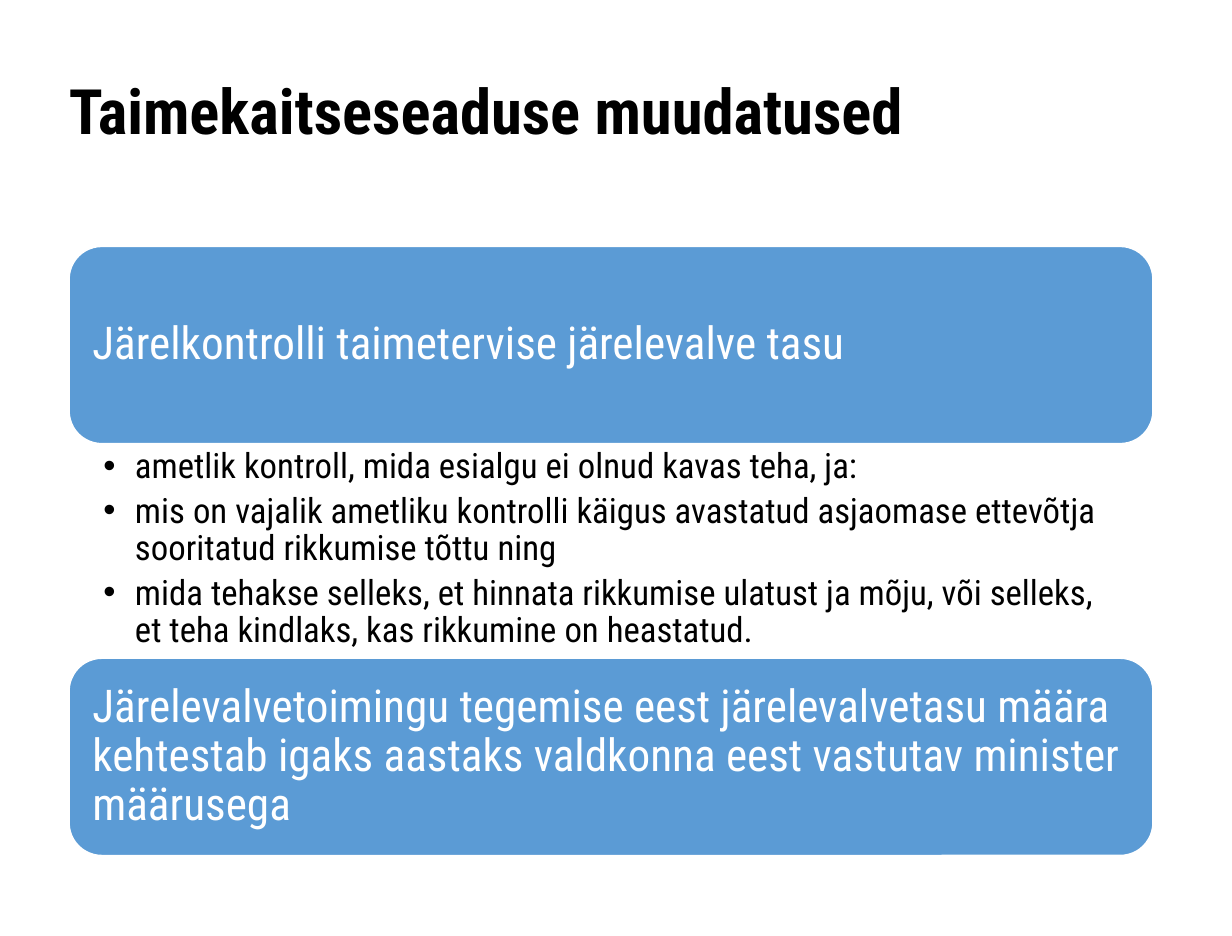
from lxml.etree import SubElement as Sub
from pptx import Presentation
from pptx.dml.color import RGBColor as Rgb
from pptx.enum.shapes import MSO_SHAPE as Shape
from pptx.enum.text import MSO_ANCHOR as Anchor, PP_ALIGN as Align
from pptx.oxml.ns import qn
from pptx.util import Cm, Pt

FONT = "Roboto Condensed"
COLORS = {"text": "000000", "panel": "5B9BD5", "light": "FFFFFF"}
LEFT, WIDTH = 1.4, 22
TOP, PANEL, LIST = 5, 4.01, 4.35

TITLE = "Taimekaitseseaduse muudatused"
FEE = "Järelkontrolli taimetervise järelevalve tasu"
RATE = ("Järelevalvetoimingu tegemise eest järelevalvetasu määra "
        "kehtestab igaks aastaks valdkonna eest vastutav minister määrusega")
POINTS = [
    "ametlik kontroll, mida esialgu ei olnud kavas teha, ja:",
    "mis on vajalik ametliku kontrolli käigus avastatud asjaomase ettevõtja "
    "sooritatud rikkumise tõttu ning",
    "mida tehakse selleks, et hinnata rikkumise ulatust ja mõju, või selleks, "
    "et teha kindlaks, kas rikkumine on heastatud.",
]


def color(name):
    return Rgb.from_string(COLORS[name])


def set_frame(frame, pads, anchor=Anchor.TOP):
    frame.word_wrap = True
    frame.vertical_anchor = anchor
    (frame.margin_left, frame.margin_top,
     frame.margin_right, frame.margin_bottom) = map(Cm, pads)


def write(para, text, size, tone="text", bold=False, lead=0.9):
    para.alignment = Align.LEFT
    para.line_spacing = lead
    run = para.add_run()
    run.text = text
    font = run.font
    font.name, font.size, font.bold = FONT, Pt(size), bold
    font.color.rgb = color(tone)


def add_dot(para):
    props = para._p.get_or_add_pPr()
    props.set("marL", str(Cm(0.64)))
    props.set("indent", str(-Cm(0.64)))
    Sub(props, qn("a:buFont"), typeface="Arial")
    Sub(props, qn("a:buChar"), char="•")


def add_title(slide):
    box = slide.shapes.add_textbox(Cm(LEFT), Cm(1.5), Cm(WIDTH), Cm(3))
    set_frame(box.text_frame, (0, 0.15, 0, 0))
    write(box.text_frame.paragraphs[0], TITLE, 36, bold=True, lead=0.88)


def add_panel(slide, top, text):
    panel = slide.shapes.add_shape(
        Shape.ROUNDED_RECTANGLE, Cm(LEFT), Cm(top), Cm(WIDTH), Cm(PANEL))
    panel.shadow.inherit = False
    panel.fill.solid()
    panel.fill.fore_color.rgb = color("panel")
    panel.line.color.rgb = color("light")
    panel.line.width = Pt(1)
    set_frame(panel.text_frame, [0.28] * 4, Anchor.MIDDLE)
    write(panel.text_frame.paragraphs[0], text, 26, "light")


def add_list(slide, top):
    box = slide.shapes.add_textbox(Cm(LEFT), Cm(top), Cm(WIDTH), Cm(LIST))
    frame = box.text_frame
    set_frame(frame, (0.7, 0.1, 0.5, 0.1))
    for i, text in enumerate(POINTS):
        para = frame.add_paragraph() if i else frame.paragraphs[0]
        write(para, text, 20)
        para.space_after = Pt(4)
        add_dot(para)


def main():
    deck = Presentation()
    deck.slide_width, deck.slide_height = Cm(25), Cm(19)
    slide = deck.slides.add_slide(deck.slide_layouts[6])
    add_title(slide)
    add_panel(slide, TOP, FEE)
    add_list(slide, TOP + PANEL)
    add_panel(slide, TOP + PANEL + LIST, RATE)
    deck.save("out.pptx")


if __name__ == "__main__":
    main()
